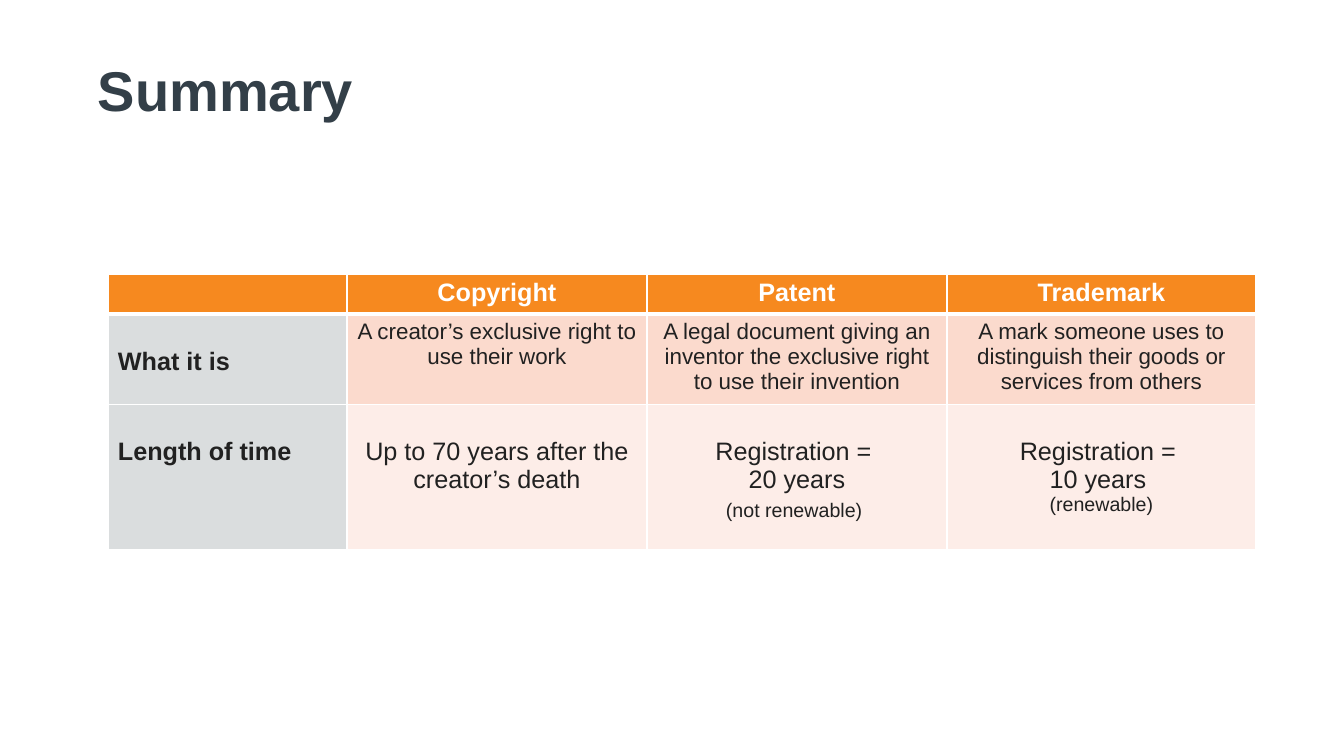
from lxml.etree import SubElement
from pptx import Presentation
from pptx.dml.color import RGBColor
from pptx.enum.text import MSO_ANCHOR, PP_ALIGN
from pptx.oxml.ns import qn
from pptx.util import Emu, Pt

SLATE = RGBColor(0x33, 0x3F, 0x48)
WHITE = RGBColor(0xFF, 0xFF, 0xFF)
INK = RGBColor(0x21, 0x21, 0x21)
ORANGE = RGBColor(0xF6, 0x89, 0x1F)
GREY = RGBColor(0xDA, 0xDD, 0xDE)
PEACH = RGBColor(0xFB, 0xDA, 0xCD)
PALE = RGBColor(0xFD, 0xED, 0xE8)


def px(n):
    return Emu(round(n * 914400 / 100.8))


def add_border(cell, side, width):
    ln = SubElement(cell._tc.get_or_add_tcPr(), qn(f"a:ln{side}"), w=str(Pt(width)))
    fill = SubElement(ln, qn("a:solidFill"))
    SubElement(fill, qn("a:srgbClr"), val=str(WHITE))


prs = Presentation()
prs.slide_width, prs.slide_height = px(1344), px(756)
s = prs.slides.add_slide(prs.slide_layouts[6])

title = s.shapes.add_textbox(px(98), px(63), px(1149), px(101))
tf = title.text_frame
tf.word_wrap = True
tf.vertical_anchor = MSO_ANCHOR.TOP
for side in ("left", "top", "right", "bottom"):
    setattr(tf, f"margin_{side}", 0)
p = tf.paragraphs[0]
p.line_spacing = 0.9
r = p.add_run()
r.text = "Summary"
r.font.name, r.font.size, r.font.bold = "Arial", Pt(40), True
r.font.color.rgb = SLATE

COL_WIDTHS = [239, 300, 300, 309]
ROW_HEIGHTS = [38, 85, 145]
BODY_FILLS = [PEACH, PALE]
BODY_SIZES = [16, 18]
LOWERED_TOP = 33  # first line starts one text line below the cell's top

# each cell is a list of paragraphs
ROWS = [
    [[], ["Copyright"], ["Patent"], ["Trademark"]],
    [["What it is"],
     ["A creator’s exclusive right to use their work"],
     ["A legal document giving an inventor the exclusive right to use their invention"],
     ["A mark someone uses to distinguish their goods or services from others"]],
    [["Length of time"],
     ["Up to 70 years after the creator’s death"],
     ["Registration = ", "20 years", "(not renewable) "],
     ["Registration = ", "10 years ", "(renewable)"]],
]

table = s.shapes.add_table(len(ROWS), len(COL_WIDTHS), px(108), px(274),
                           px(sum(COL_WIDTHS)), px(sum(ROW_HEIGHTS))).table
table.horz_banding = False
for col, width in zip(table.columns, COL_WIDTHS):
    col.width = px(width)
for row, height in zip(table.rows, ROW_HEIGHTS):
    row.height = px(height)

for i, row in enumerate(ROWS):
    for j, lines in enumerate(row):
        cell = table.cell(i, j)
        header, label = i == 0, j == 0
        widths = {"L": 1, "R": 1, "T": 3 if i == 1 else 1, "B": 3 if header else 1}
        for side, width in widths.items():
            add_border(cell, side, width)
        cell.fill.solid()
        cell.fill.fore_color.rgb = ORANGE if header else GREY if label else BODY_FILLS[i - 1]
        cell.margin_left = cell.margin_right = px(10)
        cell.margin_bottom = px(5)
        cell.margin_top = px(LOWERED_TOP if i == 2 or (label and not header) else 5)
        cell.vertical_anchor = MSO_ANCHOR.TOP

        tf = cell.text_frame
        for k, line in enumerate(lines):
            p = tf.paragraphs[0] if k == 0 else tf.add_paragraph()
            p.alignment = PP_ALIGN.LEFT if label else PP_ALIGN.CENTER
            r = p.add_run()
            r.text = line
            note = line.startswith("(")
            size = 14 if note else 18 if header or label else BODY_SIZES[i - 1]
            for name, value in {"name": "Arial", "size": Pt(size),
                                "bold": header or label}.items():
                setattr(r.font, name, value)
            r.font.color.rgb = WHITE if header else INK
            if line.startswith("(not"):
                p.space_before = Pt(4)

prs.save("out.pptx")
